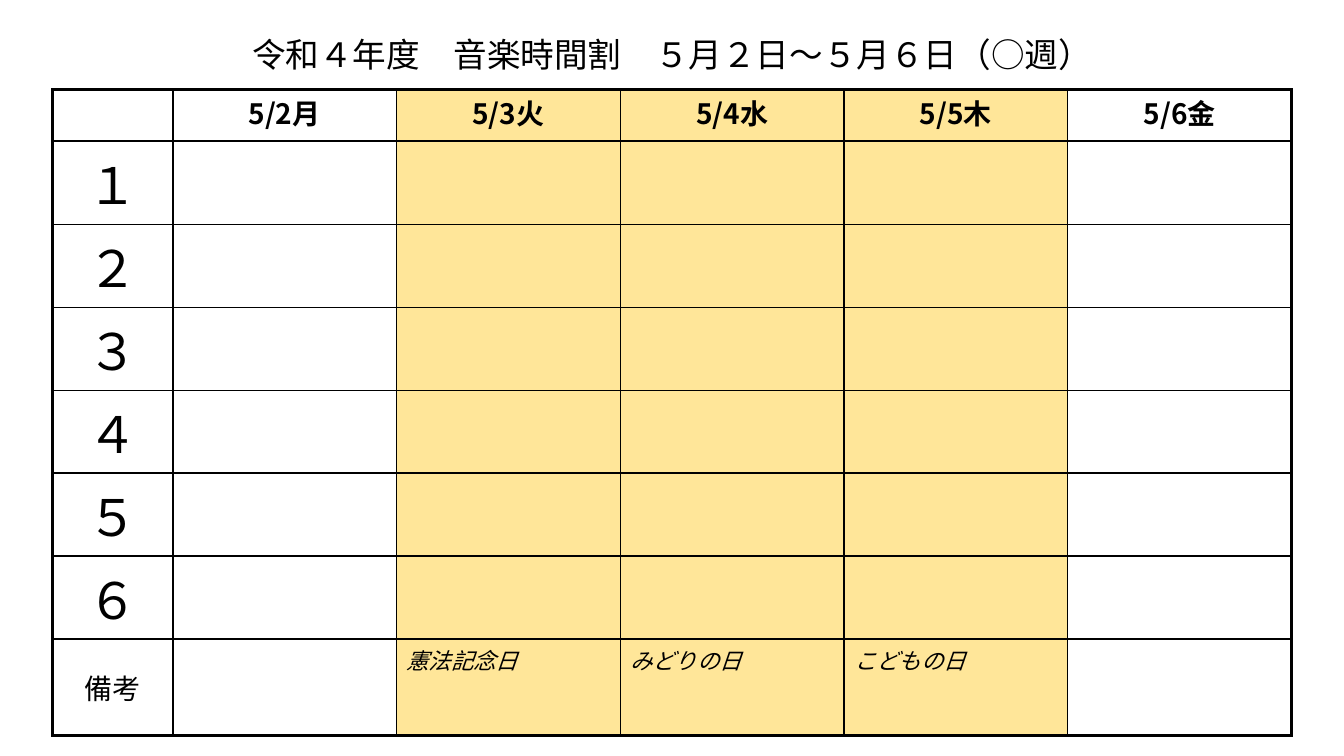
from lxml.etree import SubElement
from pptx import Presentation
from pptx.dml.color import RGBColor
from pptx.enum.text import MSO_ANCHOR, PP_ALIGN
from pptx.oxml import parse_xml
from pptx.oxml.ns import qn, nsdecls
from pptx.util import Cm, Pt

FONT = "Noto Sans CJK JP"
BLACK = RGBColor(0x00, 0x00, 0x00)
WHITE = RGBColor(0xFF, 0xFF, 0xFF)
HOLIDAY = RGBColor(0xFF, 0xE6, 0x99)

TITLE = "令和４年度　音楽時間割　５月２日〜５月６日（○週）"
DAYS = ["5/2月", "5/3火", "5/4水", "5/5木", "5/6金"]
PERIODS = "１２３４５６"
NOTES = {2: "憲法記念日", 3: "みどりの日", 4: "こどもの日"}

THIN, MEDIUM, THICK = 1, 1.5, 2.25
COL_RULES = [THICK, MEDIUM] + [THIN] * 4 + [THICK]
ROW_RULES = [THICK, MEDIUM] + [THIN] * 5 + [MEDIUM, THICK]
COL_WIDTHS = [Cm(3.02)] + [Cm(5.64)] * 5
ROW_HEIGHTS = [Cm(1.3)] + [Cm(2.09)] * 6 + [Cm(2.43)]


def write(tf, text, size, align=PP_ALIGN.CENTER, bold=False, italic=False):
    p = tf.paragraphs[0]
    p.text = text
    p.alignment = align
    r = p.runs[0]
    r.font.size = Pt(size)
    r.font.name = FONT
    r.font.bold = bold
    r.font.italic = italic
    r.font.color.rgb = BLACK
    SubElement(r._r.get_or_add_rPr(), qn("a:ea")).set("typeface", FONT)
    return p


def add_title(s):
    tb = s.shapes.add_textbox(Cm(0.5), Cm(0.76), Cm(32.87), Cm(1.25))
    tf = tb.text_frame
    tf.word_wrap = True
    tf.vertical_anchor = MSO_ANCHOR.BOTTOM
    write(tf, TITLE, 24).line_spacing = 0.9


def set_borders(cell, left, right, top, bottom):
    tcPr = cell._tc.get_or_add_tcPr()
    sides = zip("LRTB", (left, right, top, bottom))
    for i, (side, width) in enumerate(sides):
        tcPr.insert(i, parse_xml(
            f'<a:ln{side} {nsdecls("a")} w="{Pt(width)}"><a:solidFill>'
            f'<a:srgbClr val="{BLACK}"/></a:solidFill></a:ln{side}>'))


def add_grid(s):
    shape = s.shapes.add_table(len(ROW_HEIGHTS), len(COL_WIDTHS), Cm(1.33), Cm(2.26),
                               sum(COL_WIDTHS), sum(ROW_HEIGHTS))
    table = shape.table
    table.first_row = table.horz_banding = False
    for col, width in zip(table.columns, COL_WIDTHS):
        col.width = width
    for row, height in zip(table.rows, ROW_HEIGHTS):
        row.height = height
    for i in range(len(ROW_HEIGHTS)):
        for j in range(len(COL_WIDTHS)):
            cell = table.cell(i, j)
            cell.fill.solid()
            cell.fill.fore_color.rgb = HOLIDAY if j in NOTES else WHITE
            set_borders(cell, *COL_RULES[j:j + 2], *ROW_RULES[i:i + 2])
    return table


def fill_cell(cell, text, size, bold=False):
    cell.vertical_anchor = MSO_ANCHOR.MIDDLE
    return write(cell.text_frame, text, size, bold=bold)


def add_timetable(s):
    table = add_grid(s)
    for j, day in enumerate(DAYS, 1):
        fill_cell(table.cell(0, j), day, 20, bold=True).line_spacing = Pt(24)
    for i, period in enumerate(PERIODS, 1):
        fill_cell(table.cell(i, 0), period, 36)
    last = len(ROW_HEIGHTS) - 1
    fill_cell(table.cell(last, 0), "備考", 20)
    for j, note in NOTES.items():
        write(table.cell(last, j).text_frame, note, 16, PP_ALIGN.LEFT, italic=True)


def main():
    prs = Presentation()
    prs.slide_width, prs.slide_height = Cm(33.87), Cm(19.05)
    s = prs.slides.add_slide(prs.slide_layouts[6])
    add_title(s)
    add_timetable(s)
    prs.save("out.pptx")


if __name__ == "__main__":
    main()
